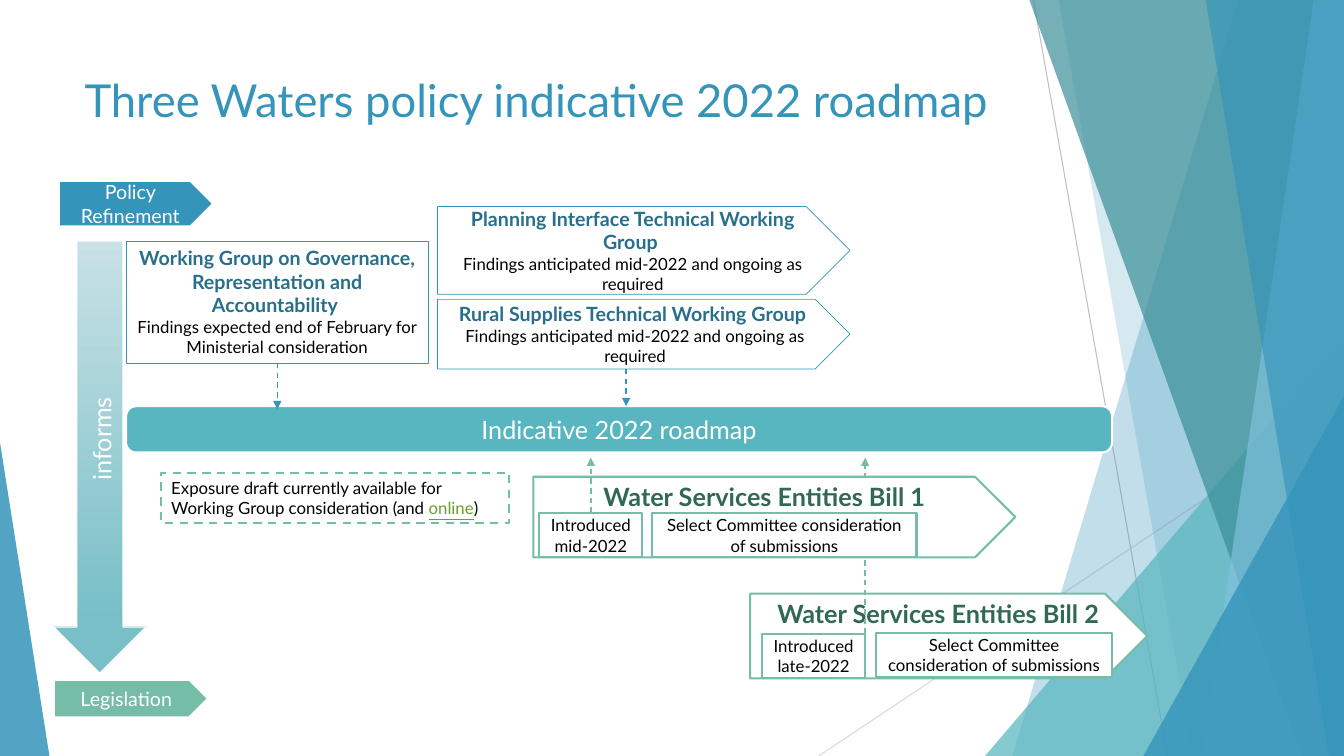
from dataclasses import dataclass
from typing import Any

from lxml.etree import SubElement
from pptx import Presentation
from pptx.dml.color import RGBColor
from pptx.enum.dml import MSO_LINE
from pptx.enum.shapes import MSO_CONNECTOR, MSO_SHAPE
from pptx.enum.text import MSO_ANCHOR, PP_ALIGN
from pptx.oxml.ns import qn
from pptx.util import Emu, Pt

PX = 9144  # one hundredth of an inch
WIDE, HIGH = 1333, 750

HUES = {
    "white": "FFFFFF", "black": "000000", "blue": "3494BA", "navy": "276F8B",
    "teal": "58B6C0", "deep": "3A8F98", "sky": "7FC1DB", "green": "75BDA7",
    "forest": "316857", "link": "6B9F25", "grey": "BFBFBF", "pale": "D9D9D9",
    "mist": "C7E1E5", "lagoon": "78BFC7",
}
STYLES: dict[str, tuple[str, dict[str, Any]]] = {
    "title": ("blue", {"size": Pt(32.4)}),
    "banner": ("white", {"size": Pt(18)}),
    "tag": ("white", {"size": Pt(14)}),
    "group": ("navy", {"size": Pt(14), "bold": True}),
    "bill": ("forest", {"size": Pt(18), "bold": True}),
    "note": ("black", {"size": Pt(12)}),
    "online": ("link", {"size": Pt(12), "underline": True}),
}
RECT, PLATE = MSO_SHAPE.RECTANGLE, MSO_SHAPE.PENTAGON
ROUND, ARROW = MSO_SHAPE.ROUNDED_RECTANGLE, MSO_SHAPE.DOWN_ARROW
TOP, MID = MSO_ANCHOR.TOP, MSO_ANCHOR.MIDDLE

Area = tuple[int, int, int, int]
Para = list[tuple[str, str]]  # (text, style) runs


@dataclass
class Facet:
    top: int
    foot: int
    hue: str
    alpha: int


@dataclass
class Wedge:
    area: Area
    apex: int
    hue: str
    alpha: int


@dataclass
class Link:
    start: tuple[int, int]
    end: tuple[int, int]
    hue: str
    width: float = 1
    arrow: bool = True


@dataclass
class Box:
    area: Area
    paras: list[Para]
    kind: Any = RECT
    fill: str = "white"
    edge: str = "green"
    width: float = 1.5
    anchor: Any = MID
    align: Any = PP_ALIGN.CENTER
    dash: bool = False


def color(name: str) -> RGBColor:
    return RGBColor.from_string(HUES[name])


def scale(area: Area) -> list[Emu]:
    return [Emu(n * PX) for n in area]


def write(shape: Any, paras: list[Para], align: Any, **frame: Any) -> None:
    for key, value in ({"word_wrap": True} | frame).items():
        setattr(shape.text_frame, key, value)
    for i, runs in enumerate(paras):
        para = shape.text_frame.paragraphs[0] if i == 0 else shape.text_frame.add_paragraph()
        para.alignment = align
        for text, style in runs:
            run = para.add_run()
            run.text = text
            hue, form = STYLES[style]
            for key, value in ({"name": "Lato"} | form).items():
                setattr(run.font, key, value)
            run.font.color.rgb = color(hue)


def tint(shape: Any, hue: str, alpha: int) -> None:
    shape.shadow.inherit = False
    shape.fill.solid()
    shape.fill.fore_color.rgb = color(hue)
    shape.line.fill.background()
    tone = shape.fill._xPr.find(qn("a:solidFill"))[0]
    SubElement(tone, qn("a:alpha"), val=str(alpha * 1000))


def draw_facet(shapes: Any, facet: Facet) -> None:
    path = shapes.build_freeform(facet.top, 0, scale=float(PX))
    path.add_line_segments([(WIDE, 0), (WIDE, HIGH), (facet.foot, HIGH)], close=True)
    tint(path.convert_to_shape(), facet.hue, facet.alpha)


def draw_wedge(shapes: Any, wedge: Wedge) -> None:
    shape = shapes.add_shape(MSO_SHAPE.ISOSCELES_TRIANGLE, *scale(wedge.area))
    shape.adjustments[0] = wedge.apex
    tint(shape, wedge.hue, wedge.alpha)


def draw_link(shapes: Any, link: Link) -> None:
    ends = scale(link.start + link.end)
    line = shapes.add_connector(MSO_CONNECTOR.STRAIGHT, *ends)
    line.line.color.rgb = color(link.hue)
    line.line.width = Pt(link.width)
    props = line._element.spPr
    if link.arrow:
        line.line.dash_style = MSO_LINE.DASH
        SubElement(props.find(qn("a:ln")), qn("a:tailEnd"), type="triangle")
    SubElement(props, qn("a:effectLst"))


def draw_box(shapes: Any, box: Box) -> Any:
    shape = shapes.add_shape(box.kind, *scale(box.area))
    shape.shadow.inherit = False
    shape.fill.solid()
    shape.fill.fore_color.rgb = color(box.fill)
    shape.line.color.rgb = color(box.edge)
    shape.line.width = Pt(box.width)
    if box.dash:
        shape.line.dash_style = MSO_LINE.DASH
    if box.kind == ROUND:
        shape.adjustments[0] = 0.22
    write(shape, box.paras, box.align, vertical_anchor=box.anchor)
    return shape


def group(area: Area, name: str, note: str, kind: Any, width: float, anchor: Any) -> Box:
    return Box(area, [[(name, "group")], [(note, "note")]], kind, "white", "blue", width, anchor)


def tag(area: Area, text: str, fill: str) -> Box:
    return Box(area, [[(text, "tag")]], PLATE, fill, "white", 2)


def bill(area: Area, text: str) -> Box:
    return Box(area, [[(text, "bill")]], PLATE, anchor=TOP)


def step(area: Area, text: str) -> Box:
    return Box(area, [[(text, "note")]])


ONGOING = "Findings anticipated mid-2022 and ongoing as required"
REVIEW = "Select Committee consideration of submissions"
DECOR = [
    Link((1025, 0), (1158, 750), "grey", 0.75, False),
    Link((1333, 403), (812, 750), "pale", 0.75, False),
    Facet(1228, 1004, "blue", 30),
    Facet(1050, 1183, "blue", 20),
    Wedge((977, 333, 356, 417), 1, "teal", 72),
    Facet(1021, 1291, "deep", 70),
    Facet(1303, 1192, "sky", 70),
    Facet(1196, 1318, "blue", 65),
    Wedge((1134, 393, 199, 357), 1, "blue", 80),
    Wedge((0, 439, 49, 311), 0, "blue", 85),
]
POLICY = [
    Box((125, 403, 978, 46), [[("Indicative 2022 roadmap", "banner")]], ROUND, "teal", "white"),
    group((125, 239, 300, 121), "Working Group on Governance, Representation and Accountability ",
          "Findings expected end of February for Ministerial consideration", RECT, 0.25, TOP),
    tag((58, 179, 154, 46), "Policy Refinement", "blue"),
    tag((53, 674, 154, 38), "Legislation", "green"),
    Link((275, 360), (275, 406), "blue"),
    group((434, 297, 409, 69), "Rural Supplies Technical Working Group ", ONGOING, PLATE, 0.5, MID),
    group((434, 205, 409, 87), "Planning Interface Technical Working Group ", ONGOING, PLATE, 0.5, MID),
    Link((621, 366), (621, 403), "blue"),
]
BILLS = [
    Box((160, 469, 345, 50), [[
        ("Exposure draft currently available for Working Group consideration (and ", "note"),
        ("online", "online"), (")", "note")]], anchor=TOP, align=PP_ALIGN.LEFT, dash=True),
    bill((744, 589, 394, 84), "Water Services Entities Bill 2"),
    step((756, 629, 102, 44), "Introduced late-2022"),
    step((869, 628, 234, 44), REVIEW),
    Link((858, 629), (858, 454), "green"),
    bill((529, 473, 478, 80), "Water Services Entities Bill 1"),
    step((535, 509, 102, 44), "Introduced mid-2022"),
    step((647, 509, 262, 44), REVIEW),
    Link((586, 509), (586, 454), "green"),
]
DRAW = {Facet: draw_facet, Wedge: draw_wedge, Link: draw_link, Box: draw_box}


def draw_all(shapes: Any, items: list[Any]) -> None:
    for item in items:
        DRAW[type(item)](shapes, item)


def draw_informs(shapes: Any) -> None:
    arrow = draw_box(shapes, Box((53, 239, 92, 429), [], ARROW, edge="white", width=1))
    arrow.fill.gradient()
    arrow.fill.gradient_angle = 270
    for stop, hue, place in zip(arrow.fill.gradient_stops, ("mist", "lagoon"), (0, 0.88)):
        stop.color.rgb = color(hue)
        stop.position = place
    label = shapes.add_textbox(*scale((48, 414, 105, 40)))
    label.rotation = 270
    write(label, [[("informs", "banner")]], PP_ALIGN.LEFT, word_wrap=False)


def main() -> None:
    deck = Presentation()
    deck.slide_width, deck.slide_height = Emu(WIDE * PX), Emu(HIGH * PX)
    shapes = deck.slides.add_slide(deck.slide_layouts[6]).shapes
    # Backdrop and title
    draw_all(shapes, DECOR)
    title = shapes.add_textbox(*scale((74, 67, 940, 80)))
    write(title, [[("Three Waters policy indicative 2022 roadmap", "title")]], PP_ALIGN.LEFT)
    # Roadmap, from policy down to legislation
    draw_all(shapes, POLICY)
    draw_informs(shapes)
    draw_all(shapes, BILLS)
    deck.save("out.pptx")


if __name__ == "__main__":
    main()
